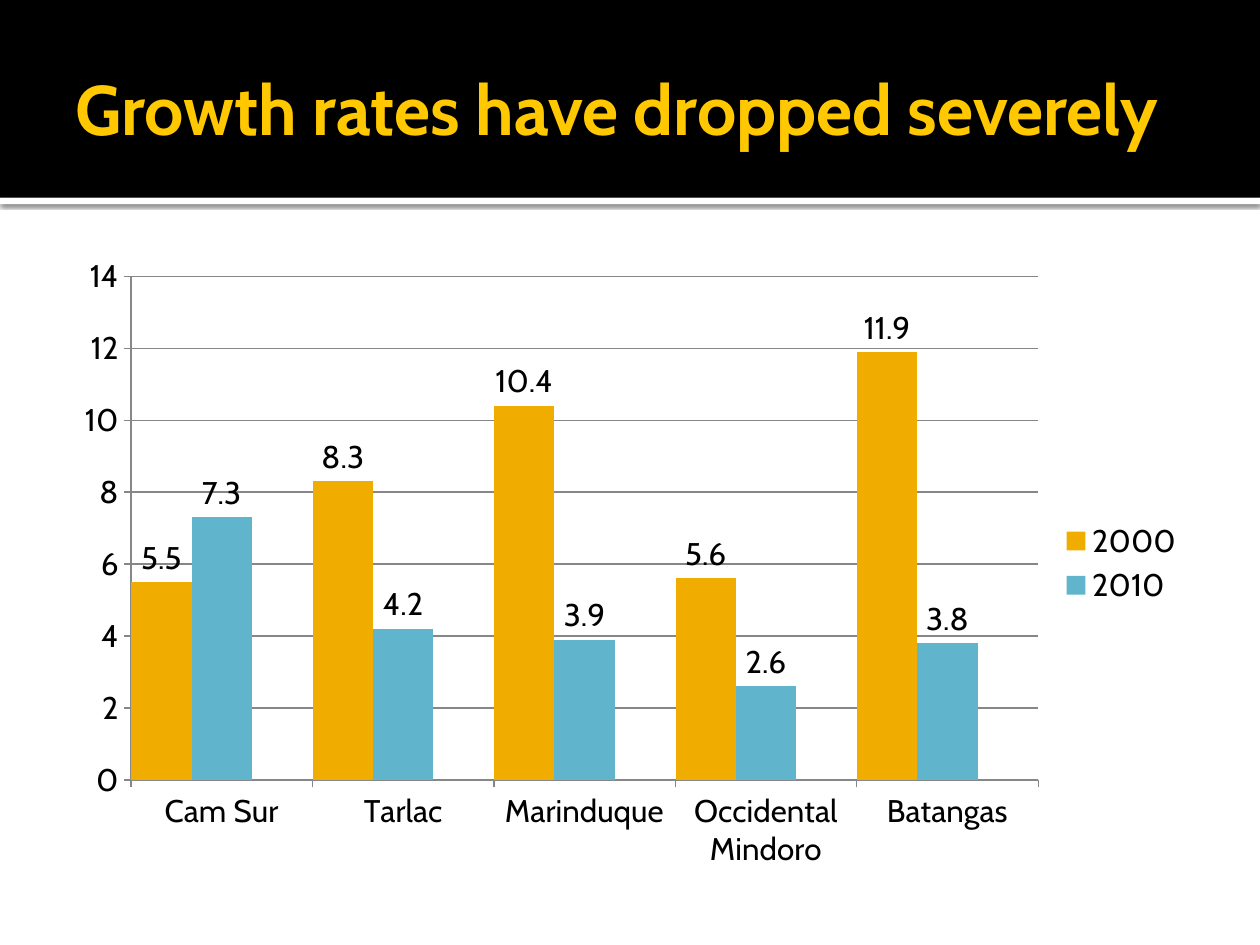
from dataclasses import dataclass

import lxml.etree
import pptx
import pptx.chart.data
import pptx.dml.color
import pptx.enum.chart
import pptx.enum.shapes
import pptx.enum.text
import pptx.oxml
import pptx.oxml.ns
import pptx.util

Inches = pptx.util.Inches
Pt = pptx.util.Pt
RGBColor = pptx.dml.color.RGBColor

BLACK = RGBColor(0x00, 0x00, 0x00)
WHITE = RGBColor(0xFF, 0xFF, 0xFF)
YELLOW = RGBColor(0xFF, 0xC8, 0x00)
AMBER = RGBColor(0xF0, 0xAD, 0x00)
BLUE = RGBColor(0x60, 0xB5, 0xCC)
PINK = RGBColor(0xE6, 0x6C, 0x7D)
GRAY = RGBColor(0x87, 0x87, 0x87)
FONT = "Cabin"


@dataclass
class Band:
    top: float
    height: float
    color: RGBColor
    casts_shadow: bool = False


@dataclass
class YearRates:
    name: str
    rates: tuple
    color: RGBColor
    shown: bool = True


BANDS = [Band(1.57, 0.05, WHITE, casts_shadow=True), Band(0, 1.57, BLACK)]
PROVINCES = ["Cam Sur", "Tarlac", "Marinduque", "Occidental Mindoro", "Batangas"]
YEARS = [
    YearRates("2000", (5.5, 8.3, 10.4, 5.6, 11.9), AMBER),
    YearRates("2010", (7.3, 4.2, 3.9, 2.6, 3.8), BLUE),
    YearRates("Series 3", (None,) * len(PROVINCES), PINK, shown=False),
]
PLOT_LAYOUT = {"x": 0.06, "y": 0.05, "w": 0.8, "h": 0.79}


def set_attributes(target, values: dict) -> None:
    for name, value in values.items():
        setattr(target, name, value)


def chart_xml(content: str):
    """Parse chart XML written with the c: prefix."""
    tag, rest = content.split(">", 1)
    return pptx.oxml.parse_xml(f"{tag} {pptx.oxml.ns.nsdecls('c')}>{rest}")


def add_band(slide, band: Band) -> None:
    strip = slide.shapes.add_shape(
        pptx.enum.shapes.MSO_SHAPE.RECTANGLE,
        Inches(0), Inches(band.top), Inches(10), Inches(band.height))
    strip.shadow.inherit = False
    strip.fill.solid()
    strip.fill.fore_color.rgb = band.color
    strip.line.fill.background()
    if band.casts_shadow:
        effects = strip.element.spPr.find(pptx.oxml.ns.qn("a:effectLst"))
        effects.append(pptx.oxml.parse_xml(
            f'<a:outerShdw {pptx.oxml.ns.nsdecls("a")} blurRad="{Pt(2.5)}" '
            f'dist="{Pt(0.8)}" dir="5400000" algn="tl" rotWithShape="0">'
            f'<a:srgbClr val="{BLACK}"><a:alpha val="60000"/></a:srgbClr>'
            '</a:outerShdw>'))


def fill_title(slide, wording: str) -> None:
    title = slide.shapes.title
    set_attributes(title, {"left": Inches(0.5), "top": Inches(0.17),
                           "width": Inches(9), "height": Inches(1.37)})
    set_attributes(title.text_frame, {
        "text": wording, "word_wrap": True,
        "auto_size": pptx.enum.text.MSO_AUTO_SIZE.NONE,
        "vertical_anchor": pptx.enum.text.MSO_ANCHOR.MIDDLE,
        "margin_left": Inches(0.1), "margin_right": Inches(0.05),
        "margin_top": Inches(0.05), "margin_bottom": Inches(0.05)})
    heading = title.text_frame.paragraphs[0]
    heading.alignment = pptx.enum.text.PP_ALIGN.LEFT
    font = heading.runs[0].font
    set_attributes(font, {"name": FONT, "size": Pt(40), "bold": True})
    font.color.rgb = YELLOW
    # The title must lie in front of the black band
    slide.shapes.element.append(title.element)


def format_axes(chart) -> None:
    set_attributes(chart.value_axis, {
        "minimum_scale": 0, "maximum_scale": 14, "major_unit": 2,
        "has_major_gridlines": True})
    lines = [chart.value_axis.major_gridlines.format.line]
    for axis in (chart.category_axis, chart.value_axis):
        axis.major_tick_mark = pptx.enum.chart.XL_TICK_MARK.OUTSIDE
        lines.append(axis.format.line)
    for line in lines:
        line.color.rgb = GRAY
        line.width = Pt(0.75)


def format_series(series, year: YearRates) -> None:
    series.format.fill.solid()
    series.format.fill.fore_color.rgb = year.color
    series.invert_if_negative = False
    if year.shown:
        set_attributes(series.data_labels, {
            "show_value": True,
            "position": pptx.enum.chart.XL_LABEL_POSITION.OUTSIDE_END})


def format_legend(chart) -> None:
    chart.has_legend = True
    set_attributes(chart.legend, {
        "position": pptx.enum.chart.XL_LEGEND_POSITION.RIGHT,
        "include_in_layout": False})
    legend_position = chart.element.find(f".//{pptx.oxml.ns.qn('c:legendPos')}")
    for index, year in enumerate(YEARS):
        if not year.shown:
            legend_position.addnext(chart_xml(
                f'<c:legendEntry><c:idx val="{index}"/><c:delete val="1"/></c:legendEntry>'))


def place_plot(chart) -> None:
    plot_area = chart.element.find(f".//{pptx.oxml.ns.qn('c:plotArea')}")
    for automatic in plot_area.findall(pptx.oxml.ns.qn("c:layout")):
        plot_area.remove(automatic)
    modes = "".join(f'<c:{side}Mode val="edge"/>' for side in "xy")
    extents = "".join(f'<c:{key} val="{share}"/>' for key, share in PLOT_LAYOUT.items())
    plot_area.insert(0, chart_xml(
        '<c:layout><c:manualLayout><c:layoutTarget val="inner"/>'
        f'{modes}{extents}</c:manualLayout></c:layout>'))


def add_growth_chart(slide) -> None:
    growth = pptx.chart.data.CategoryChartData()
    growth.categories = PROVINCES
    for year in YEARS:
        growth.add_series(year.name, year.rates)
    chart = slide.shapes.add_chart(
        pptx.enum.chart.XL_CHART_TYPE.COLUMN_CLUSTERED,
        Inches(0.5), Inches(1.94), Inches(9), Inches(5.06), growth).chart
    chart.has_title = False
    set_attributes(chart.font, {"name": FONT, "size": Pt(17.9)})
    chart.font.color.rgb = BLACK
    columns = chart.plots[0]
    set_attributes(columns, {"gap_width": 1, "overlap": 0, "vary_by_categories": False})
    for series, year in zip(columns.series, YEARS):
        format_series(series, year)
    format_axes(chart)
    format_legend(chart)
    place_plot(chart)


def main() -> None:
    deck = pptx.Presentation()
    set_attributes(deck, {"slide_width": Inches(10), "slide_height": Inches(7.5)})
    slide = deck.slides.add_slide(deck.slide_layouts.get_by_name("Title Only"))
    for band in BANDS:
        add_band(slide, band)
    fill_title(slide, "Growth rates have dropped severely")
    add_growth_chart(slide)
    deck.save("out.pptx")


if __name__ == "__main__":
    main()
